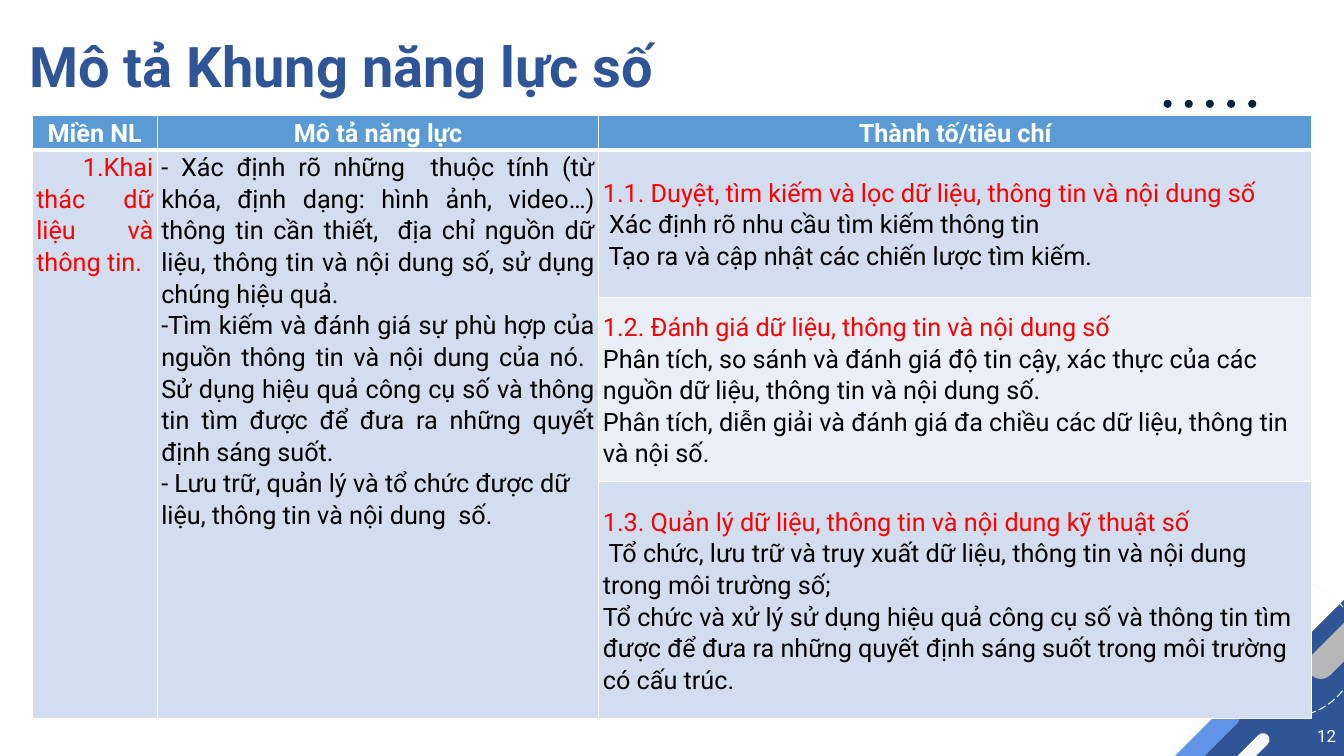
from lxml import etree
from pptx import Presentation
from pptx.dml.color import RGBColor
from pptx.enum.dml import MSO_LINE
from pptx.enum.shapes import MSO_SHAPE
from pptx.enum.text import MSO_ANCHOR, PP_ALIGN
from pptx.oxml.ns import qn
from pptx.util import Inches, Pt

TRIANGLE, PILL, OVAL = MSO_SHAPE.RIGHT_TRIANGLE, MSO_SHAPE.ROUNDED_RECTANGLE, MSO_SHAPE.OVAL
LONG_DASH = MSO_LINE.LONG_DASH
TOP, MIDDLE = MSO_ANCHOR.TOP, MSO_ANCHOR.MIDDLE
LEFT, CENTER = PP_ALIGN.LEFT, PP_ALIGN.CENTER
RIGHT, JUSTIFY = PP_ALIGN.RIGHT, PP_ALIGN.JUSTIFY

WHITE = RGBColor(0xFF, 0xFF, 0xFF)
BLACK = RGBColor(0x00, 0x00, 0x00)
RED = RGBColor(0xFF, 0x00, 0x00)
NAVY = RGBColor(0x2F, 0x55, 0x97)
DARK = RGBColor(0x09, 0x22, 0x41)
SKY = RGBColor(0x61, 0x94, 0xE6)
GREY = RGBColor(0xB7, 0xB7, 0xB7)
PALE = RGBColor(0xF8, 0xF8, 0xF8)
HEADER = RGBColor(0x5B, 0x9B, 0xD5)
BAND = RGBColor(0xD2, 0xDE, 0xEF)
LIGHT_BAND = RGBColor(0xEA, 0xEF, 0xF7)


def write(frame, lines, size=18, bold=False, spacing=1.0):
    """Fill a text frame with (text, colour, alignment) paragraphs."""
    for index, (text, color, align) in enumerate(lines):
        para = frame.paragraphs[0] if index == 0 else frame.add_paragraph()
        para.alignment = align
        para.line_spacing = spacing
        span = para.add_run()
        span.text = text
        span.font.name = "Roboto"
        span.font.size = Pt(size)
        span.font.bold = bold
        span.font.color.rgb = color


def add_border(cell, side, points):
    line = etree.SubElement(cell._tc.get_or_add_tcPr(), qn(f"a:{side}"), w=str(Pt(points)))
    fill = etree.SubElement(line, qn("a:solidFill"))
    etree.SubElement(fill, qn("a:srgbClr"), val=str(WHITE))


deck = Presentation()
deck.slide_width, deck.slide_height = Inches(13.33), Inches(7.5)
page = deck.slides.add_slide(deck.slide_layouts[5])

# Corner decoration and row of dots
decorations = [
    (TRIANGLE, 11.77, 5.91, 1.61, 1.6, 270, NAVY),
    (PILL, 12.83, 6.14, 1.19, 0.27, 135, GREY),
    (OVAL, 12.11, 5.76, 1.35, 1.35, 180, None),
    (PILL, 11.3, 7.33, 1.13, 0.21, 135, SKY),
    (PILL, 11.89, 7.51, 0.8, 0.13, 135, PALE),
]
decorations += [(OVAL, 11.54 + 0.21 * step, 0.99, 0.08, 0.08, 0, DARK) for step in range(5)]
for kind, left, top, width, height, angle, color in decorations:
    shape = page.shapes.add_shape(kind, Inches(left), Inches(top), Inches(width), Inches(height))
    shape.shadow.inherit = False
    shape.rotation = angle
    if kind == PILL:
        shape.adjustments[0] = 0.5
    if color is None:
        shape.fill.background()
        shape.line.color.rgb = PALE
        shape.line.width = Pt(0.75)
        shape.line.dash_style = LONG_DASH
    else:
        shape.fill.solid()
        shape.fill.fore_color.rgb = color
        shape.line.fill.background()

title = page.shapes.title
title.left, title.top = Inches(0.19), Inches(0.31)
title.width, title.height = Inches(11.5), Inches(0.76)
title.text_frame.vertical_anchor = MIDDLE
write(title.text_frame, [("Mô tả Khung năng lực số", NAVY, LEFT)], size=40, bold=True, spacing=0.9)

number_box = page.shapes.add_textbox(Inches(12.62), Inches(7.1), Inches(0.73), Inches(0.4))
number_box.text_frame.word_wrap = True
number_box.text_frame.vertical_anchor = MIDDLE
write(number_box.text_frame, [("12", WHITE, RIGHT)], size=12)

# Competence table
column_widths = [1.24, 4.38, 7.07]
row_heights = [0.35, 1.46, 1.83, 2.35]
table = page.shapes.add_table(
    len(row_heights), len(column_widths), Inches(0.32), Inches(1.14),
    Inches(sum(column_widths)), Inches(sum(row_heights))).table
table.horz_banding = False
for column, width in zip(table.columns, column_widths):
    column.width = Inches(width)
for row, height in zip(table.rows, row_heights):
    row.height = Inches(height)

row_fills = [HEADER, BAND, LIGHT_BAND, BAND]
for row_index, row in enumerate(table.rows):
    for column_index, cell in enumerate(row.cells):
        add_border(cell, "lnL", 1)
        add_border(cell, "lnR", 1)
        add_border(cell, "lnT", 3 if row_index == 1 else 1)
        add_border(cell, "lnB", 3 if row_index == 0 else 1)
        merged = row_index > 0 and column_index < 2
        cell.fill.solid()
        cell.fill.fore_color.rgb = BAND if merged else row_fills[row_index]
        cell.margin_left = cell.margin_right = Inches(0.04)
        cell.margin_top, cell.margin_bottom = Inches(0.01), 0
        cell.vertical_anchor = TOP if merged else MIDDLE
for column_index in (0, 1):
    table.cell(1, column_index).merge(table.cell(3, column_index))

for column_index, heading in enumerate(["Miền NL", "Mô tả năng lực", "Thành tố/tiêu chí"]):
    write(table.cell(0, column_index).text_frame, [(heading, WHITE, CENTER)],
          bold=True, spacing=1.07)

domain = [(" 1.Khai thác dữ liệu và thông tin. ", RED, JUSTIFY)]
description = [
    ("- Xác định rõ những  thuộc tính (từ khóa, định dạng: hình ảnh, video…) thông tin "
     "cần thiết,  địa chỉ nguồn dữ liệu, thông tin và nội dung số, sử dụng chúng hiệu quả.",
     BLACK, JUSTIFY),
    ("-Tìm kiếm và đánh giá sự phù hợp của nguồn thông tin và nội dung của nó.  Sử dụng "
     "hiệu quả công cụ số và thông tin tìm được để đưa ra những quyết định sáng suốt. ",
     BLACK, JUSTIFY),
    ("- Lưu trữ, quản lý và tổ chức được dữ liệu, thông tin và nội dung  số.", BLACK, LEFT),
]
write(table.cell(1, 0).text_frame, domain, spacing=1.07)
write(table.cell(1, 1).text_frame, description, spacing=1.07)

criteria = [
    ["1.1. Duyệt, tìm kiếm và lọc dữ liệu, thông tin và nội dung số",
     " Xác định rõ nhu cầu tìm kiếm thông tin",
     " Tạo ra và cập nhật các chiến lược tìm kiếm."],
    ["1.2. Đánh giá dữ liệu, thông tin và nội dung số",
     "Phân tích, so sánh và đánh giá độ tin cậy, xác thực của các nguồn dữ liệu, "
     "thông tin và nội dung số.",
     "Phân tích, diễn giải và đánh giá đa chiều các dữ liệu, thông tin và nội số."],
    ["1.3. Quản lý dữ liệu, thông tin và nội dung kỹ thuật số",
     " Tổ chức, lưu trữ và truy xuất dữ liệu, thông tin và nội dung trong môi trường số;",
     "Tổ chức và xử lý sử dụng hiệu quả công cụ số và thông tin tìm được để đưa ra "
     "những quyết định sáng suốt trong môi trường có cấu trúc."],
]
for row_index, (heading, *details) in enumerate(criteria, start=1):
    lines = [(heading, RED, LEFT)] + [(detail, BLACK, LEFT) for detail in details]
    write(table.cell(row_index, 2).text_frame, lines, spacing=1.07)

deck.save("out.pptx")
